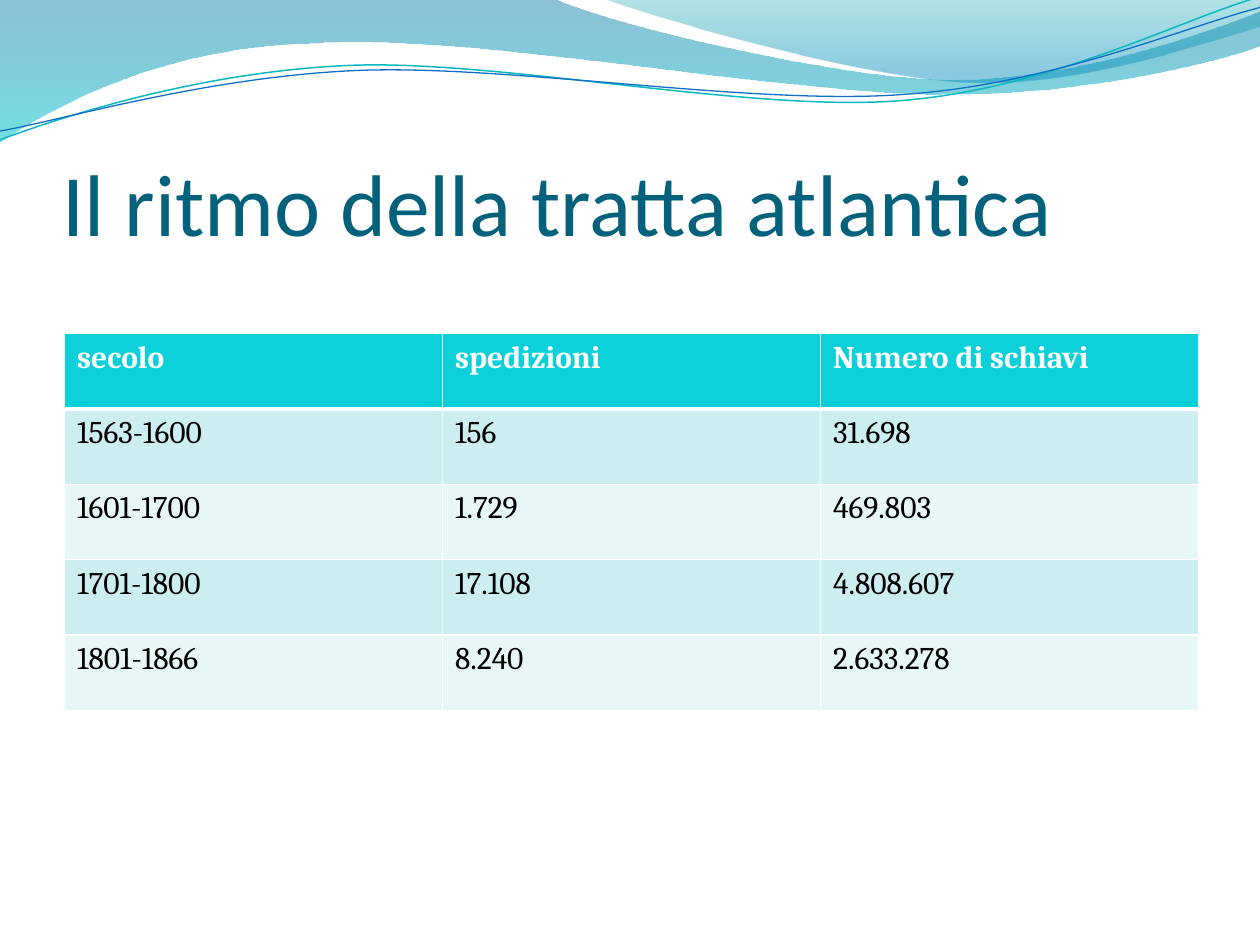
from collections import namedtuple
from dataclasses import dataclass
from math import cos, radians, sin

from pptx import Presentation
from pptx.dml.color import RGBColor
from pptx.enum import text
from pptx.oxml import parse_xml
from pptx.oxml.ns import nsdecls, qn
from pptx.util import Pt

Box = namedtuple("Box", "left top width height")


@dataclass(frozen=True)
class Theme:
    title: str = "04617B"
    header: str = "0BD0D9"
    bands: tuple = ("CCEEF1", "E7F7F8")
    white: str = "FFFFFF"
    body: str = "000000"
    broad_wave: tuple = ((0, "0074A1", 45), (100, "00C6CF", 55))
    right_wave: tuple = ((0, "00A1A9", 30), (80, "008BBF", 45))
    teal_line: str = "0AB8BF"
    blue_line: str = "0F6FC6"
    title_font: str = "Calibri"
    table_font: str = "Cambria"
    title_size: int = 50
    table_size: int = 18


THEME = Theme()
LINE_TILT = -2.7

BROAD_WAVE = [
    (0, 0), (316.8, -0.7),
    (342.7, 12.2, 478.1, 45.4, 545.8, 45.4),
    (614.2, 45.4, 689.8, 18.7, 720, 6.5),
    (720.7, 25.9),
    (707.8, 31.7, 626.4, 54.7, 537.1, 54),
    (447.8, 54, 275, 20.2, 185, 24.5),
    (92.9, 25.9, 33.1, 59.8, -0.7, 81.4),
    (0, 0),
]
RIGHT_WAVE = [
    (344.9, -0.7),
    (366.5, 7.9, 491, 44.6, 553.7, 46.8),
    (616.3, 49.7, 691.9, 23, 720, 15.1),
    (720, 0),
    (344.9, -0.7),
]
TEAL_LINE = [
    (0, 79.9),
    (34.6, 67, 113.8, 41, 199.4, 37.4),
    (284.4, 33.8, 427, 64.1, 513.4, 57.6),
    (599.8, 51.1, 675.4, 10.8, 718.6, -1.4),
]
BLUE_LINE = [
    (0, 74.9),
    (33.8, 69.1, 118.1, 43.9, 203.8, 40.3),
    (290.2, 36.7, 429.8, 60.5, 516.2, 54),
    (601.9, 48.2, 677.5, 15.1, 720, 4.3),
]

VOYAGES = [
    ("secolo", "spedizioni", "Numero di schiavi"),
    ("1563-1600", "156", "31.698"),
    ("1601-1700", "1.729", "469.803"),
    ("1701-1800", "17.108", "4.808.607"),
    ("1801-1866", "8.240", "2.633.278"),
]


def style_font(font, name, size, color, bold=False):
    font.name, font.size, font.bold = name, Pt(size), bold
    font.color.rgb = RGBColor.from_string(color)


def turn(point, pivot, degrees):
    angle = radians(degrees)
    x, y = point[0] - pivot[0], point[1] - pivot[1]
    return (pivot[0] + x * cos(angle) - y * sin(angle),
            pivot[1] + x * sin(angle) + y * cos(angle))


def bend(outline, segments):
    steps = iter(list(outline.element.spPr.iter(qn("a:lnTo"))))
    for segment in segments[1:]:
        step = next(steps)
        if len(segment) == 2:
            continue
        curve = parse_xml(f'<a:cubicBezTo {nsdecls("a")}/>')
        step.addprevious(curve)
        for corner in (step, next(steps), next(steps)):
            curve.append(corner[0])
            corner.getparent().remove(corner)


def add_outline(slide, box, segments, close, pivot=(0, 0), tilt=0):
    flat = [turn(segment[i:i + 2], pivot, -tilt)
            for segment in segments for i in range(0, len(segment), 2)]
    points = [(Pt(box.left + x), Pt(box.top + y)) for x, y in flat]
    builder = slide.shapes.build_freeform(*points[0])
    builder.add_line_segments(points[1:], close=close)
    outline = builder.convert_to_shape()
    bend(outline, segments)
    outline.rotation = tilt
    outline.shadow.inherit = False
    return outline


def add_wave(slide, box, segments, stops):
    wave = add_outline(slide, box, segments, True)
    wave.line.fill.background()
    stop_xml = "".join(
        f'<a:gs pos="{place * 1000}"><a:srgbClr val="{color}">'
        f'<a:alpha val="{alpha * 1000}"/></a:srgbClr></a:gs>'
        for place, color, alpha in stops)
    gradient = parse_xml(
        f'<a:gradFill {nsdecls("a")} rotWithShape="1"><a:gsLst>{stop_xml}</a:gsLst>'
        '<a:lin ang="5400000" scaled="0"/></a:gradFill>')
    wave.element.spPr.custGeom.addnext(gradient)


def add_wave_line(slide, box, segments, pivot, color, width):
    curve = add_outline(slide, box, segments, False, pivot, LINE_TILT)
    curve.fill.background()
    curve.line.color.rgb = RGBColor.from_string(color)
    curve.line.width = Pt(width)


def add_wave_band(slide, box):
    add_wave(slide, box, BROAD_WAVE, THEME.broad_wave)
    add_wave(slide, box, RIGHT_WAVE, THEME.right_wave)
    add_wave_line(slide, box, TEAL_LINE, (359.3, 41.4), THEME.teal_line, 0.85)
    add_wave_line(slide, box, BLUE_LINE, (359.6, 42.5), THEME.blue_line, 0.75)


def add_title(slide, box, wording):
    frame = slide.shapes.add_textbox(*map(Pt, box)).text_frame
    frame.word_wrap = True
    frame.vertical_anchor = text.MSO_ANCHOR.BOTTOM
    frame.margin_left = frame.margin_right = frame.margin_bottom = 0
    frame.margin_top = Pt(3.6)
    heading = frame.paragraphs[0]
    heading.text = wording
    style_font(heading.font, THEME.title_font, THEME.title_size, THEME.title)


def add_borders(cell, widths):
    properties = cell._tc.get_or_add_tcPr()
    for side, width in widths.items():
        properties.append(parse_xml(
            f'<a:ln{side} {nsdecls("a")} w="{Pt(width)}"><a:solidFill>'
            f'<a:srgbClr val="{THEME.white}"/></a:solidFill></a:ln{side}>'))


def add_voyage_table(slide, box, records):
    table = slide.shapes.add_table(len(records), len(records[0]), *map(Pt, box)).table
    for r, record in enumerate(records):
        is_header = r == 0
        fill = THEME.header if is_header else THEME.bands[(r - 1) % 2]
        ink = THEME.white if is_header else THEME.body
        widths = {"L": 1, "R": 1, "T": 3 if r == 1 else 1, "B": 3 if is_header else 1}
        for c, wording in enumerate(record):
            cell = table.cell(r, c)
            add_borders(cell, widths)
            cell.fill.solid()
            cell.fill.fore_color.rgb = RGBColor.from_string(fill)
            cell.text = wording
            style_font(cell.text_frame.paragraphs[0].font,
                       THEME.table_font, THEME.table_size, ink, is_header)


def main():
    deck = Presentation()
    deck.slide_width, deck.slide_height = Pt(720), Pt(540)
    slide = deck.slides.add_slide(deck.slide_layouts[6])
    add_wave_band(slide, Box(0, 0, 720, 82))
    add_title(slide, Box(36, 55.4, 648, 90), "Il ritmo della tratta atlantica")
    add_voyage_table(slide, Box(36.9, 190.6, 648, 215.3), VOYAGES)
    deck.save("out.pptx")


if __name__ == "__main__":
    main()
